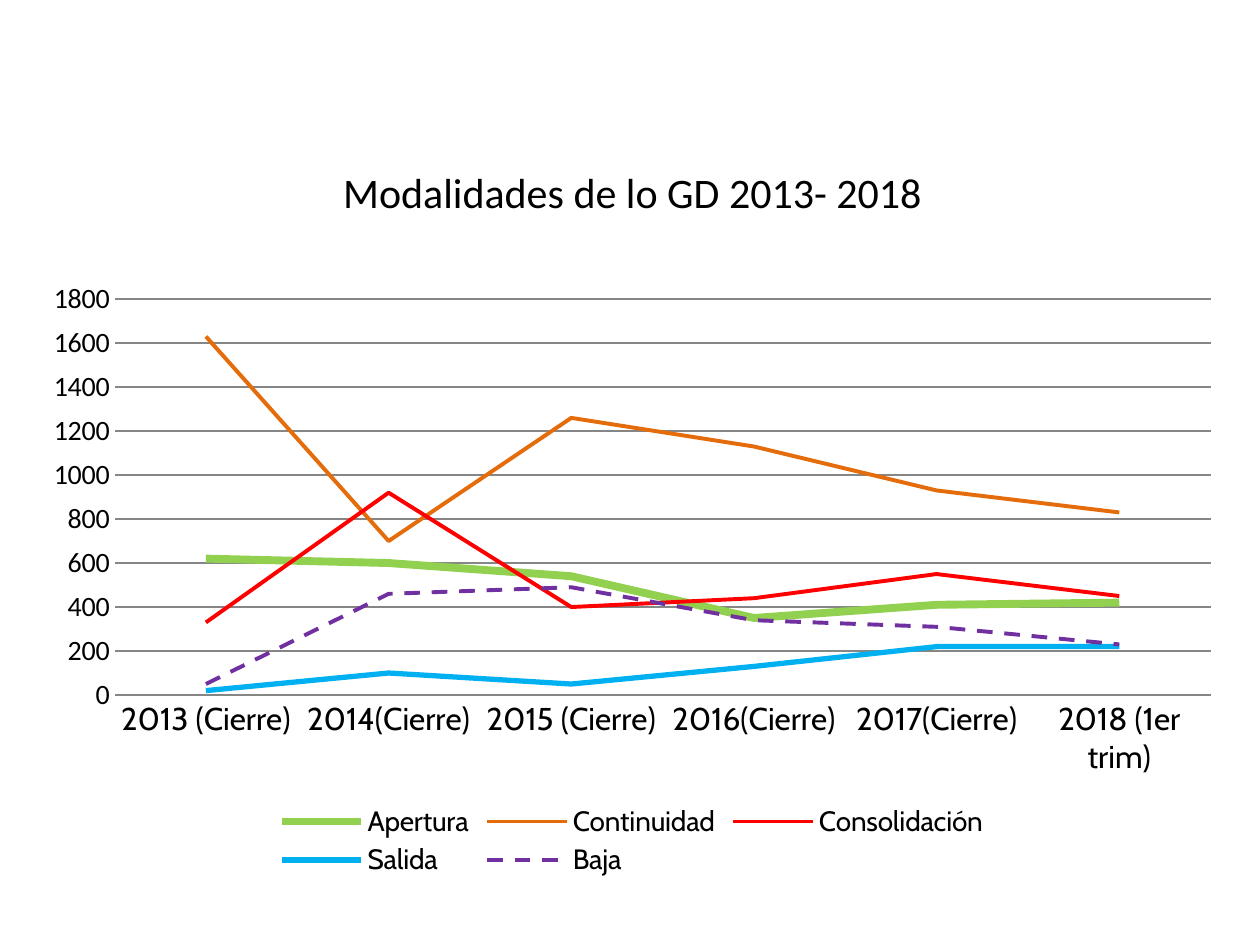
from pptx import Presentation
from pptx.chart.data import CategoryChartData as Data
from pptx.dml.color import RGBColor as RGB
from pptx.enum.chart import XL_CHART_TYPE as Kind, XL_LEGEND_POSITION as Pos, XL_TICK_MARK as Tick
from pptx.enum.dml import MSO_LINE as Dash
from pptx.oxml import parse_xml
from pptx.util import Inches, Pt

HUES = {"text": "000000", "grid": "868686", "green": "92D050", "orange": "E46C0A",
        "red": "FF0000", "blue": "00B0F0", "purple": "7030A0"}
TITLE = "Modalidades de lo GD 2013- 2018"
YEARS = ["2013 (Cierre)", "2014(Cierre)", "2015 (Cierre)",
         "2016(Cierre)", "2017(Cierre)", "2018 (1er trim)"]
LINES = [
    ("Apertura", (620, 600, 540, 350, 410, 420), "green", 4.5, None),
    ("Continuidad", (1630, 700, 1260, 1130, 930, 830), "orange", 2.25, None),
    ("Consolidación", (330, 920, 400, 440, 550, 450), "red", 2.25, None),
    ("Salida", (20, 100, 50, 130, 220, 220), "blue", 3, None),
    ("Baja", (50, 460, 490, 340, 310, 230), "purple", 2.25, Dash.DASH),
]
AREA = (0.24, 1.07, 9.56, 5.93)
PLOT = {"x": 0.07, "y": 0.22, "w": 0.91, "h": 0.53}
NS = "http://schemas.openxmlformats.org/drawingml/2006/chart"


def style(item, **vals):
    """Set each given format value on the item."""
    for key, val in vals.items():
        setattr(item, key, val)


def ink(font, size, name):
    """Give a font its size, face and black colour."""
    style(font, size=Pt(size), name=name, bold=False)
    font.color.rgb = RGB.from_string(HUES["text"])


def draw(line, hue, width):
    """Give a line its colour and width."""
    line.color.rgb = RGB.from_string(HUES[hue])
    line.width = Pt(width)


def place(chart):
    """Fix the inner plot area within the chart."""
    plot = chart._chartSpace.chart.plotArea
    for old in plot.findall(f"{{{NS}}}layout"):
        plot.remove(old)
    parts = '<c:layoutTarget val="inner"/><c:xMode val="edge"/><c:yMode val="edge"/>'
    parts += "".join(f'<c:{key} val="{val}"/>' for key, val in PLOT.items())
    plot.insert(0, parse_xml(f'<c:layout xmlns:c="{NS}"><c:manualLayout>{parts}'
                             "</c:manualLayout></c:layout>"))


def main():
    """Build the slide with its line chart."""
    deck = Presentation()
    style(deck, slide_width=Inches(10), slide_height=Inches(7.5))
    slide = deck.slides.add_slide(deck.slide_layouts[6])
    data = Data(number_format="###0")
    data.categories = YEARS
    for name, vals, *_ in LINES:
        data.add_series(name, vals)
    chart = slide.shapes.add_chart(Kind.LINE, *map(Inches, AREA), data).chart
    ink(chart.font, 10, "Calibri")

    style(chart, has_title=True, has_legend=True)
    frame = chart.chart_title.text_frame
    frame.text = TITLE
    ink(frame.paragraphs[0].runs[0].font, 24, "Calibri")
    style(chart.legend, position=Pos.BOTTOM, include_in_layout=False)
    ink(chart.legend.font, 16, "Cabin")

    cat, val = chart.category_axis, chart.value_axis
    for axis, size, face in ((cat, 18, "Cabin"), (val, 16, "Calibri")):
        style(axis, major_tick_mark=Tick.NONE, minor_tick_mark=Tick.NONE)
        ink(axis.tick_labels.font, size, face)
    style(val, minimum_scale=0, maximum_scale=1800, major_unit=200, has_major_gridlines=True)
    style(val.tick_labels, number_format="###0", number_format_is_linked=False)
    val.format.line.fill.background()
    for line in (cat.format.line, val.major_gridlines.format.line):
        draw(line, "grid", 0.75)

    chart.plots[0].vary_by_categories = False
    for part, (_, _, hue, width, dash) in zip(chart.plots[0].series, LINES):
        part.smooth = False
        draw(part.format.line, hue, width)
        part.format.line.dash_style = dash
    place(chart)
    deck.save("out.pptx")


if __name__ == "__main__":
    main()
